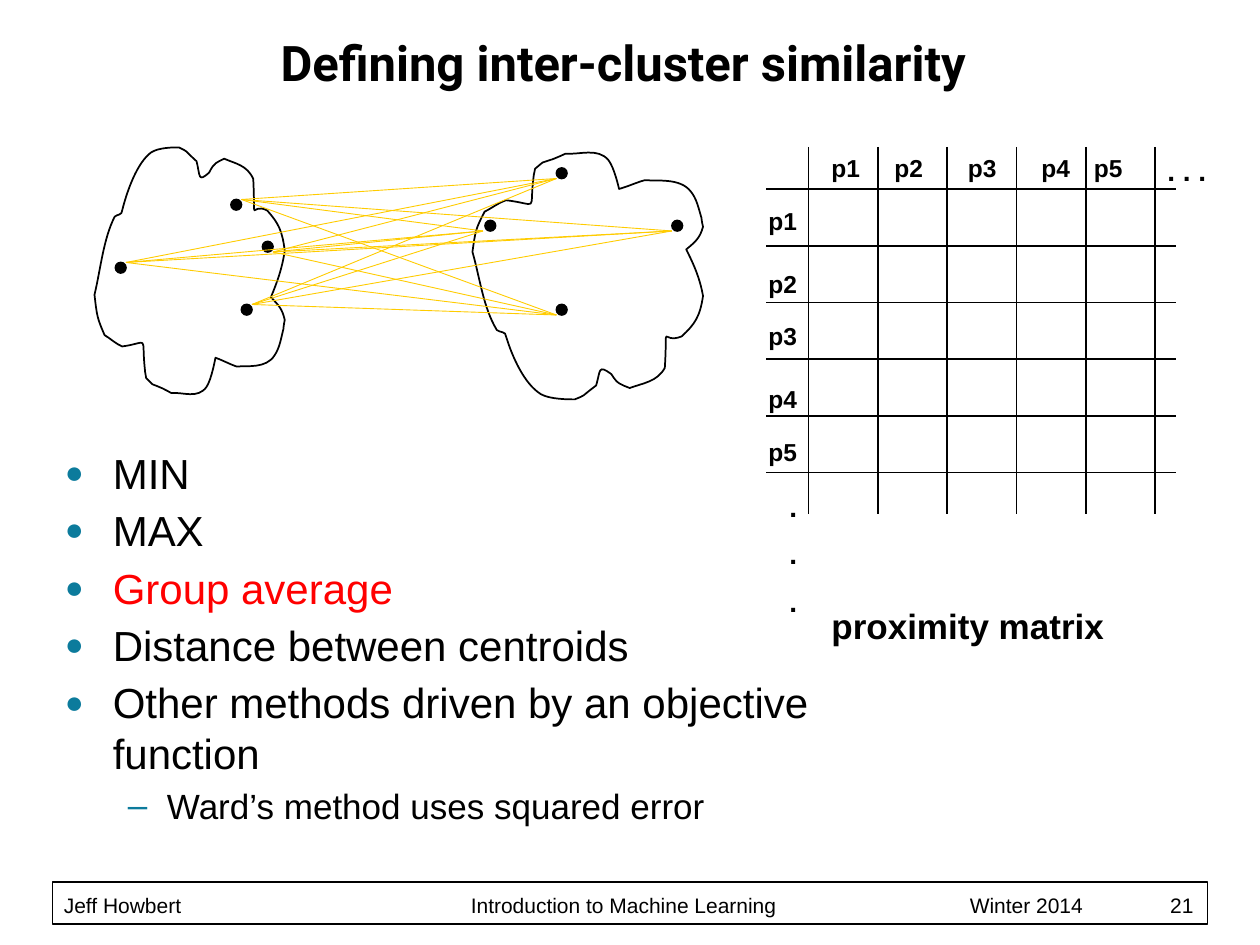
import itertools

import lxml.etree
import pptx
import pptx.dml.color
import pptx.enum.shapes
import pptx.enum.text
import pptx.oxml.ns
import pptx.util

COLORS = {name: pptx.dml.color.RGBColor.from_string(value) for name, value in {
    "ink": "000000", "paper": "FFFFFF", "link": "FFCC00",
    "highlight": "FF0000", "bullet": "0C7B9C"}.items()}
qn = pptx.oxml.ns.qn

# The page is a grid of 120 columns by 90 rows, 12 to the inch.
CELL = pptx.util.Inches(1) // 12
deck = pptx.Presentation()
deck.slide_width, deck.slide_height = 120 * CELL, 90 * CELL
page = deck.slides.add_slide(deck.slide_layouts[6])


def add_text(left, top, width, height, lines, size, bold=False, font="Arial"):
    """Add a wrapping text box, with all lengths in grid cells."""
    box = page.shapes.add_textbox(*(round(n * CELL) for n in (left, top, width, height)))
    frame = box.text_frame
    frame.word_wrap = True
    frame.text = "\n".join(lines)
    for para in frame.paragraphs:
        para.font.name = font
        para.font.size = pptx.util.Pt(size)
        para.font.bold = bold
        para.font.color.rgb = COLORS["ink"]
    return frame


def add_line(start, end, color, weight):
    line = page.shapes.add_connector(
        pptx.enum.shapes.MSO_CONNECTOR.STRAIGHT,
        *(round(n * CELL) for n in (*start, *end)))
    line.line.color.rgb = COLORS[color]
    line.line.width = pptx.util.Pt(weight)
    lxml.etree.SubElement(line._element.spPr, qn("a:effectLst"))


# Footer
bar = page.shapes.add_shape(pptx.enum.shapes.MSO_SHAPE.RECTANGLE,
                            5 * CELL, 84 * CELL, 110 * CELL, 4 * CELL)
bar.shadow.inherit = False
bar.fill.solid()
bar.fill.fore_color.rgb = COLORS["paper"]
bar.line.color.rgb = COLORS["ink"]
bar.line.width = pptx.util.Pt(1)

footer = add_text(5, 84, 110, 3.4, [
    "Jeff Howbert\tIntroduction to Machine Learning\tWinter 2014\t21"], 12)
footer.margin_left = pptx.util.Inches(0.09)
footer.margin_right = footer.margin_top = footer.margin_bottom = 0
footer.vertical_anchor = pptx.enum.text.MSO_ANCHOR.BOTTOM
para = footer.paragraphs[0]
para.line_spacing = pptx.util.Pt(20)
tabs = lxml.etree.Element(qn("a:tabLst"))
for inches in (3.23, 7.19, 8.78):
    lxml.etree.SubElement(tabs, qn("a:tab"), pos=str(pptx.util.Inches(inches)), algn="l")
para._p.pPr.find(qn("a:defRPr")).addprevious(tabs)

# Proximity matrix
for step in range(6):
    column, row = 77 + 6.6 * step, 18 + 5.4 * step
    add_line((column, 14), (column, 49), "ink", 1)
    add_line((73, row), (112, row), "ink", 1)
for number, (column, row) in enumerate(
        zip((78, 84, 91, 98, 103), (19, 25, 30, 36, 41)), start=1):
    add_text(column, 14, 7, 4, [f"p{number}"], 14, bold=True)
    add_text(72, row, 7, 4, [f"p{number}"], 14, bold=True)
add_text(110, 14, 7, 4.4, [". . ."], 16, bold=True)
more_rows = add_text(74, 46, 7, 14, [".", ".", "."], 16, bold=True)
for para in more_rows.paragraphs[1:]:
    para.space_before = pptx.util.Pt(8)
add_text(78, 57, 33, 5.2, ["proximity matrix"], 20, bold=True)

# Clusters: Bezier control points in inches, three to a curve after the first
OUTLINE = [
    (0.91, 1.72),
    (0.82, 1.9), (0.8, 2.13), (0.75, 2.34), (0.77, 2.51), (0.77, 2.52), (0.83, 2.66),
    (0.88, 2.69), (0.92, 2.73), (0.97, 2.75), (1.19, 2.72), (1.12, 2.65), (1.15, 2.93),
    (1.15, 2.96), (1.16, 2.98), (1.16, 3), (1.23, 3.07), (1.19, 3.04), (1.26, 3.07),
    (1.29, 3.08), (1.36, 3.12), (1.36, 3.12), (1.45, 3.11), (1.57, 3.17), (1.64, 3.07),
    (1.68, 3.01), (1.71, 2.84), (1.71, 2.84), (1.77, 2.86), (1.82, 2.89), (1.88, 2.91),
    (1.96, 2.9), (2.11, 2.93), (2.18, 2.82), (2.22, 2.76), (2.23, 2.69), (2.25, 2.61),
    (2.25, 2.59), (2.26, 2.54), (2.26, 2.54), (2.24, 2.45), (2.21, 2.42), (2.15, 2.36),
    (2.2, 2.24), (2.24, 2.13), (2.26, 1.99), (2.24, 1.83), (2.21, 1.77), (2.12, 1.67),
    (1.98, 1.6), (2.03, 1.82), (2.01, 1.42), (1.96, 1.31), (1.87, 1.3), (1.78, 1.26),
    (1.72, 1.29), (1.7, 1.29), (1.66, 1.37), (1.57, 1.45), (1.59, 1.4), (1.56, 1.28),
    (1.45, 1.18), (1.5, 1.21), (1.42, 1.17), (1.38, 1.17), (1.26, 1.17), (1.2, 1.21),
    (1.09, 1.29), (1.01, 1.51), (0.97, 1.67), (0.97, 1.71), (0.93, 1.7), (0.91, 1.72),
]
# The right cluster is the left one, widened and turned upside down.
WIDEN = 1.83 / 1.51
left_outline = OUTLINE
right_outline = [(3.75 + (x - 0.75) * WIDEN, 4.34 - y) for x, y in OUTLINE]
left_dots = [(23, 29), (22, 19), (11, 25), (25, 23)]
right_dots = [(64, 21), (46.2, 21), (53, 29), (53, 16)]

for outline, dots in ((left_outline, left_dots), (right_outline, right_dots)):
    points = [(pptx.util.Inches(x), pptx.util.Inches(y)) for x, y in outline]
    builder = page.shapes.build_freeform(*points[0])
    builder.add_line_segments(points[1:], close=True)
    cluster = builder.convert_to_shape()
    # Every three straight segments become one Bezier curve.
    segments = list(cluster._element.spPr.iter(qn("a:lnTo")))
    for first in range(0, len(segments), 3):
        curve = lxml.etree.Element(qn("a:cubicBezTo"))
        segments[first].addprevious(curve)
        for segment in segments[first:first + 3]:
            curve.append(segment[0])
            segment.getparent().remove(segment)
    cluster.shadow.inherit = False
    cluster.fill.background()
    cluster.line.color.rgb = COLORS["ink"]
    cluster.line.width = pptx.util.Pt(1)
    for column, row in dots:
        dot = page.shapes.add_shape(pptx.enum.shapes.MSO_SHAPE.OVAL,
                                    round(column * CELL), row * CELL, CELL, CELL)
        dot.shadow.inherit = False
        dot.fill.solid()
        dot.fill.fore_color.rgb = COLORS["ink"]
        dot.line.color.rgb = COLORS["ink"]
        dot.line.width = pptx.util.Pt(1)

left_ends = [(24, 29), (26, 24), (12, 25), (23, 19)]
right_ends = [(53, 30), (46, 22), (53, 17), (64, 22)]
for start, end in itertools.product(left_ends, right_ends):
    add_line(start, end, "link", 0.5)

# Methods
methods = add_text(5, 42, 76, 41, [
    "MIN", "MAX", "Group average", "Distance between centroids",
    "Other methods driven by an objective function",
    "Ward’s method uses squared error"], 24)
for index, para in enumerate(methods.paragraphs):
    nested = index == 5
    margin, hang, size, mark = (0.81, 0.31, 100, "–") if nested else (0.38, 0.38, 75, "●")
    para.level = int(nested)
    para.space_before = pptx.util.Pt(2 if index else 0)
    para.space_after = pptx.util.Pt(2)
    props = para._p.pPr
    props.set("marL", str(pptx.util.Inches(margin)))
    props.set("indent", str(-pptx.util.Inches(hang)))
    font_props = props.find(qn("a:defRPr"))
    for tag, key, value in (("a:buClr", None, None),
                            ("a:buSzPct", "val", str(size * 1000)),
                            ("a:buFont", "typeface", "Arial"),
                            ("a:buChar", "char", mark)):
        item = lxml.etree.Element(qn(tag))
        if key:
            item.set(key, value)
        else:
            lxml.etree.SubElement(item, qn("a:srgbClr"), val=str(COLORS["bullet"]))
        font_props.addprevious(item)
methods.paragraphs[2].font.color.rgb = COLORS["highlight"]
methods.paragraphs[5].font.size = pptx.util.Pt(20)

# Title
title = add_text(5, 2, 108.7, 7.25, ["Defining inter-cluster similarity"], 28,
                 bold=True, font="Roboto")
title.vertical_anchor = pptx.enum.text.MSO_ANCHOR.BOTTOM
title.paragraphs[0].alignment = pptx.enum.text.PP_ALIGN.CENTER
title.paragraphs[0].line_spacing = pptx.util.Pt(36)

deck.save("out.pptx")
